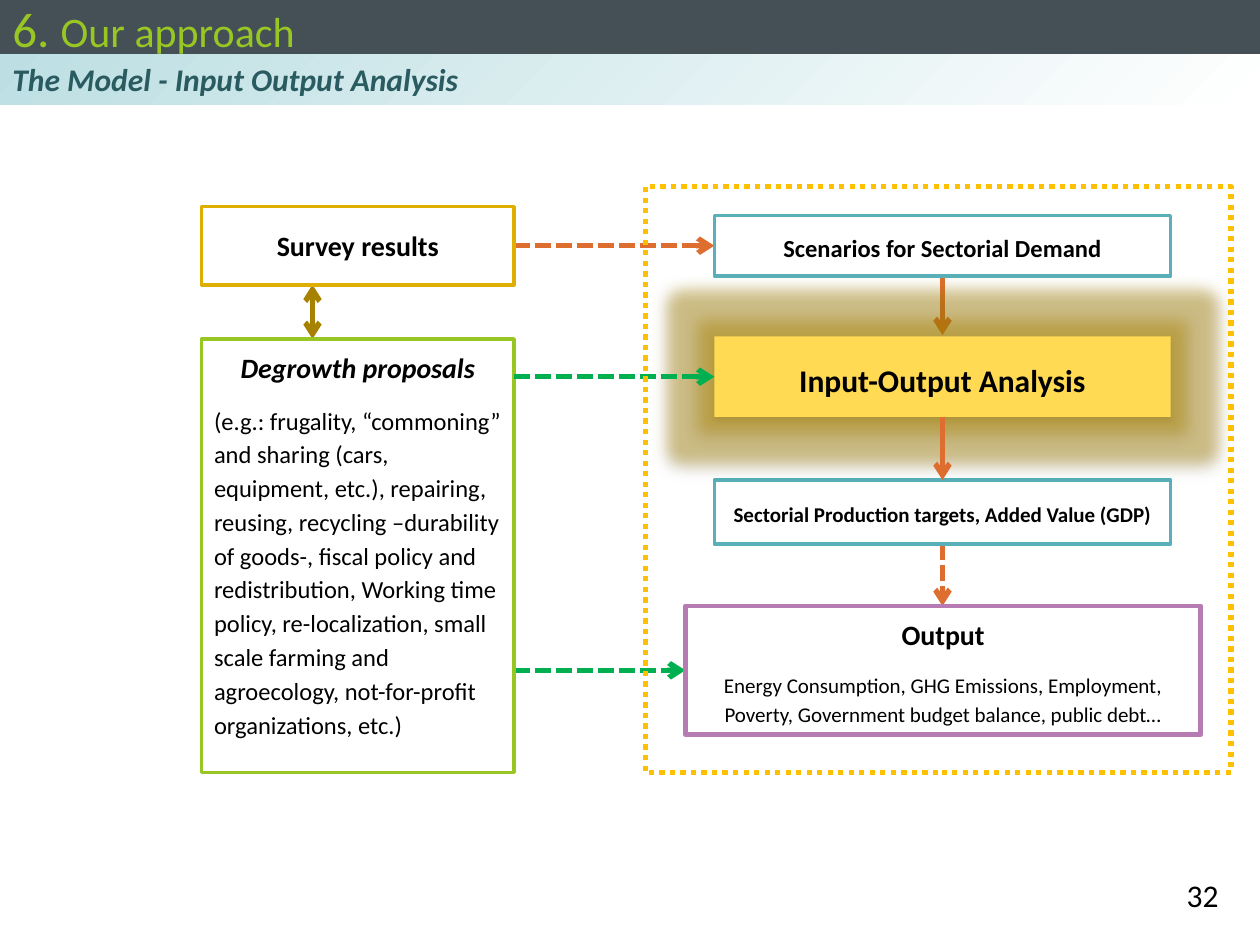
"""Build the slide on the input-output analysis model."""
import pptx
import pptx.dml.color
import pptx.enum.dml
import pptx.enum.shapes
import pptx.enum.text
import pptx.oxml
import pptx.oxml.ns
import pptx.util
from pptx.util import Inches

COLOURS = {
    "slate": "444F56", "lime": "98C723", "black": "000000", "white": "FFFFFF",
    "mist": "BDDFE3", "petrol": "295B60", "teal": "59B0B9", "orange": "DE6E30",
    "green": "00B050", "olive": "A68200", "mustard": "DEAE00", "yellow": "FFDA52",
    "violet": "B77BB4", "amber": "FFC000", "glow": "B08800",
}
RGB = {name: pptx.dml.color.RGBColor.from_string(code) for name, code in COLOURS.items()}
ALIGN = pptx.enum.text.PP_ALIGN
ANCHOR = pptx.enum.text.MSO_ANCHOR
DASH = pptx.enum.dml.MSO_LINE
NS = pptx.oxml.ns.nsdecls("a")

presentation = pptx.Presentation()
presentation.slide_width, presentation.slide_height = Inches(10), Inches(7.5)
slide = presentation.slides.add_slide(presentation.slide_layouts[6])


def add_panel(place, fill=None, border=None, width=2, paragraphs=(), anchor=ANCHOR.MIDDLE,
              align=ALIGN.CENTER, spaced=True):
    panel = slide.shapes.add_shape(
        pptx.enum.shapes.MSO_SHAPE.RECTANGLE, *[Inches(value) for value in place])
    panel.shadow.inherit = False
    if fill:
        panel.fill.solid()
        panel.fill.fore_color.rgb = RGB[fill]
    else:
        panel.fill.background()
    if border:
        panel.line.color.rgb = RGB[border]
        panel.line.width = pptx.util.Pt(width)
    else:
        panel.line.fill.background()
    frame = panel.text_frame
    frame.word_wrap = True
    frame.vertical_anchor = anchor
    for index, (runs, own_align) in enumerate(paragraphs):
        paragraph = frame.add_paragraph() if index else frame.paragraphs[0]
        paragraph.alignment = own_align or align
        if spaced:
            paragraph.line_spacing = 1.15
            paragraph.space_after = pptx.util.Pt(10)
        for text, size, colour, style in runs:
            run = paragraph.add_run()
            run.text = text
            run.font.color.rgb = RGB[colour]
            font_format = {"name": "Calibri", "size": pptx.util.Pt(size),
                           "bold": "b" in style, "italic": "i" in style}
            for attribute, value in font_format.items():
                setattr(run.font, attribute, value)
    return panel


def add_arrow(start, end, colour, dashed=False, both_ends=False):
    arrow = slide.shapes.add_connector(
        pptx.enum.shapes.MSO_CONNECTOR.STRAIGHT,
        *[Inches(value) for value in (*start, *end)])
    arrow.line.color.rgb = RGB[colour]
    arrow.line.width = pptx.util.Pt(3)
    if dashed:
        arrow.line.dash_style = DASH.SQUARE_DOT
        arrow.line._ln.find(pptx.oxml.ns.qn("a:prstDash")).set("val", "sysDash")
    for end_tag in ("headEnd", "tailEnd") if both_ends else ("tailEnd",):
        arrow.line._ln.append(pptx.oxml.parse_xml(f'<a:{end_tag} {NS} type="arrow"/>'))
    arrow._element.spPr.append(pptx.oxml.parse_xml(f"<a:effectLst {NS}/>"))


add_panel((0, 0, 10, 0.44), "slate", align=ALIGN.LEFT, spaced=False, paragraphs=[
    ([("6. ", 28, "lime", ""), ("Our approach", 24, "lime", "")], None)])

page_number = add_panel((9.13, 6.9, 0.64, 0.4), anchor=ANCHOR.TOP, align=ALIGN.RIGHT,
                        spaced=False, paragraphs=[([("32", 18, "black", "")], None)])

left, column_width = 1.6, 2.48
right_edge = left + column_width
model_left, model_width = 5.67, 3.62
model_centre = model_left + model_width / 2

add_arrow((right_edge, 5.32), (5.44, 5.32), "green", dashed=True)
add_arrow((2.48, 2.69), (2.48, 2.26), "olive", both_ends=True)
add_arrow((model_centre, 4.32), (model_centre, 4.81), "orange", dashed=True)
add_arrow((right_edge, 1.95), (model_left, 1.95), "orange", dashed=True)
add_arrow((model_centre, 2.19), (model_centre, 2.66), "orange")

add_panel((left, 1.64, column_width, 0.62), "white", "mustard", spaced=False,
          paragraphs=[([("Survey results", 16, "black", "b")], None)])

model_steps = [
    (3.81, 0.51, "white", "teal", "Sectorial Production targets, Added Value (GDP)", 12),
    (1.71, 0.48, "white", "teal", "Scenarios for Sectorial Demand", 14),
    (2.67, 0.64, "yellow", None, "Input-Output Analysis", 18),
]
for top, height, fill, border, label, size in model_steps:
    analysis = add_panel((model_left, top, model_width, height), fill, border,
                         paragraphs=[([(label, size, "black", "b")], None)])

effects = analysis._element.spPr.find(pptx.oxml.ns.qn("a:effectLst"))
effects.append(pptx.oxml.parse_xml(
    f'<a:glow {NS} rad="{Inches(0.25)}"><a:srgbClr val="{COLOURS["glow"]}">'
    '<a:alpha val="40000"/></a:srgbClr></a:glow>'))
effects.append(pptx.oxml.parse_xml(
    f'<a:outerShdw {NS} blurRad="{pptx.util.Pt(3.5)}" dist="{pptx.util.Pt(2.2)}" '
    f'dir="5400000" rotWithShape="0"><a:srgbClr val="{COLOURS["black"]}">'
    '<a:alpha val="32000"/></a:srgbClr></a:outerShdw>'))

add_panel((5.44, 4.81, 4.09, 1.02), "white", "violet", 2.75, anchor=ANCHOR.TOP, paragraphs=[
    ([("Output", 16, "black", "b")], None),
    ([("Energy Consumption, GHG Emissions, Employment, Poverty, "
       "Government budget balance, public debt…", 12, "black", "")], None)])

add_arrow((model_centre, 3.31), (model_centre, 3.81), "orange")

add_panel((left, 2.69, column_width, 3.44), "white", "lime", anchor=ANCHOR.TOP, paragraphs=[
    ([("Degrowth proposals", 16, "black", "bi")], None),
    ([("(e.g.: frugality, “commoning” and sharing (cars, equipment, etc.), repairing, "
       "reusing, recycling –durability of goods-, fiscal policy and redistribution, "
       "Working time policy, re-localization, small scale farming and agroecology, "
       "not-for-profit organizations, etc.)", 14, "black", "")], ALIGN.LEFT)])

add_arrow((right_edge, 2.99), (model_left, 2.99), "green", dashed=True)

model_frame = add_panel((5.12, 1.48, 4.65, 4.65), border="amber", width=3)
model_frame.line.dash_style = DASH.ROUND_DOT

subtitle = add_panel((0, 0.43, 10, 0.4), "mist", align=ALIGN.LEFT, spaced=False, paragraphs=[
    ([("The Model - Input Output Analysis", 18, "petrol", "bi")], None)])
subtitle.fill.gradient()
subtitle.fill.gradient_angle = 315
for stop, colour, position in zip(subtitle.fill.gradient_stops, ("mist", "white"), (0, 1)):
    stop.color.rgb = RGB[colour]
    stop.position = position

presentation.save("out.pptx")
